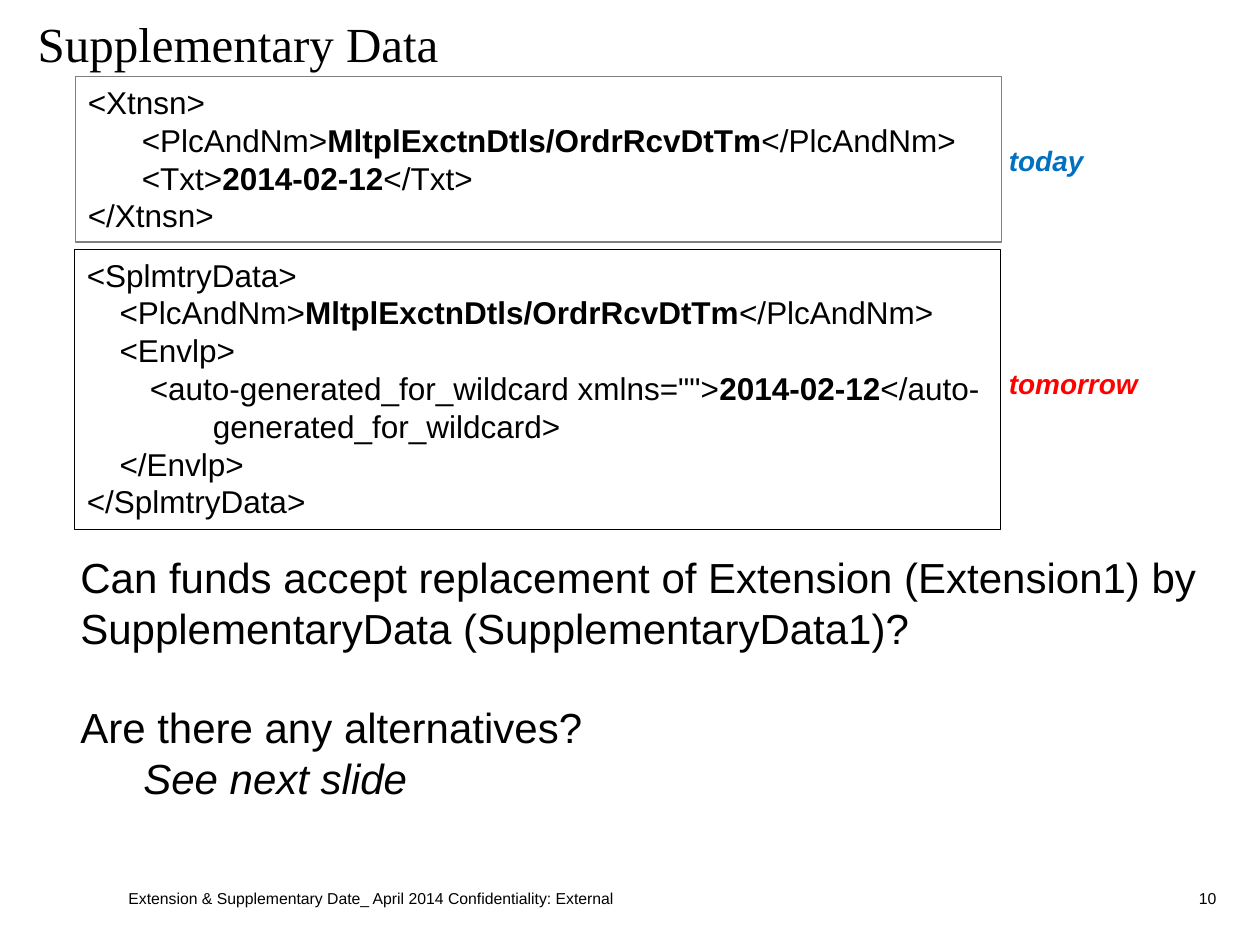
from dataclasses import dataclass

from lxml import etree
from pptx import Presentation
from pptx import util as u
from pptx.dml.color import RGBColor
from pptx.enum import shapes, text
from pptx.oxml.ns import qn


@dataclass(frozen=True)
class Theme:
    sans: str = "Arial"
    serif: str = "Times New Roman"
    black: str = "000000"
    grey: str = "808080"
    blue: str = "0070C0"
    red: str = "FF0000"
    title: int = 28
    body: int = 24
    code: int = 18
    label: int = 16
    footer: int = 9


th = Theme()


def write(sp, lines, size, font=th.sans, color=th.black, bold=False, italic=False,
          align=text.PP_ALIGN.LEFT, anchor=text.MSO_ANCHOR.TOP, wrap=True, tabs=()):
    tf = sp.text_frame
    tf.word_wrap = wrap
    tf.vertical_anchor = anchor
    for i, line in enumerate(lines):
        p = tf.paragraphs[0] if i == 0 else tf.add_paragraph()
        p.alignment = align
        if tabs:
            tab_list = etree.SubElement(p._p.get_or_add_pPr(), qn("a:tabLst"))
            for pos in tabs:
                etree.SubElement(tab_list, qn("a:tab"), pos=str(u.Cm(pos)), algn="l")
        for j, part in enumerate(line.split("**")):
            r = p.add_run()
            r.text = part
            r.font.name = font
            r.font.size = u.Pt(size)
            r.font.bold = bold or j % 2 == 1
            r.font.italic = italic
            r.font.color.rgb = RGBColor.from_string(color)
    return tf


prs = Presentation()
prs.slide_width, prs.slide_height = u.Cm(25.4), u.Cm(19.05)
s = prs.slides.add_slide(prs.slide_layouts[6])

title = s.shapes.add_textbox(u.Cm(0.51), u.Cm(0.15), u.Cm(24.56), u.Cm(1.68))
write(title, ["Supplementary Data"], th.title, font=th.serif, wrap=False)

footers = [
    (2.34, 15.77, "Extension & Supplementary Date_ April 2014 Confidentiality: External",
     text.PP_ALIGN.LEFT),
    (22.66, 2.11, "10", text.PP_ALIGN.RIGHT),
]
for x, w, words, align in footers:
    sp = s.shapes.add_textbox(u.Cm(x), u.Cm(17.78), u.Cm(w), u.Cm(0.64))
    write(sp, [words], th.footer, align=align, anchor=text.MSO_ANCHOR.MIDDLE)

extension = [
    "<Xtnsn>",
    "\t<PlcAndNm>**MltplExctnDtls/OrdrRcvDtTm**</PlcAndNm>",
    "\t<Txt>**2014-02-12**</Txt>",
    "</Xtnsn>",
]
supplement = [
    "<SplmtryData>",
    "\t<PlcAndNm>**MltplExctnDtls/OrdrRcvDtTm**</PlcAndNm>",
    "\t<Envlp>",
    "\t\t<auto-generated_for_wildcard xmlns=\"\">**2014-02-12**</auto-",
    "\t\t\tgenerated_for_wildcard>",
    "\t</Envlp>",
    "</SplmtryData>",
]
code_boxes = [
    (1.52, 1.55, 3.33, th.grey, extension, (1.09,)),
    (1.5, 5.03, 5.64, th.black, supplement, (0.66, 1.27)),
]
for x, y, h, line_color, lines, tabs in code_boxes:
    sp = s.shapes.add_shape(shapes.MSO_SHAPE.RECTANGLE, u.Cm(x), u.Cm(y), u.Cm(18.67), u.Cm(h))
    sp.shadow.inherit = False
    sp.fill.background()
    sp.line.color.rgb = RGBColor.from_string(line_color)
    sp.line.width = u.Pt(0.75)
    write(sp, lines, th.code, tabs=tabs)

for y, w, word, color in [(2.77, 2.03, "today", th.blue), (7.26, 3.15, "tomorrow", th.red)]:
    sp = s.shapes.add_textbox(u.Cm(20.09), u.Cm(y), u.Cm(w), u.Cm(0.94))
    write(sp, [word], th.label, color=color, bold=True, italic=True, wrap=False)

questions = s.shapes.add_textbox(u.Cm(1.37), u.Cm(11), u.Cm(23.83), u.Cm(5.38))
tf = write(questions, [
    "Can funds accept replacement of Extension (Extension1) by "
    "SupplementaryData (SupplementaryData1)?",
    "Are there any alternatives?",
    "\tSee next slide",
], th.body)
tf.paragraphs[1].space_before = u.Pt(28)
tf.paragraphs[2].runs[0].font.italic = True

prs.save("out.pptx")
